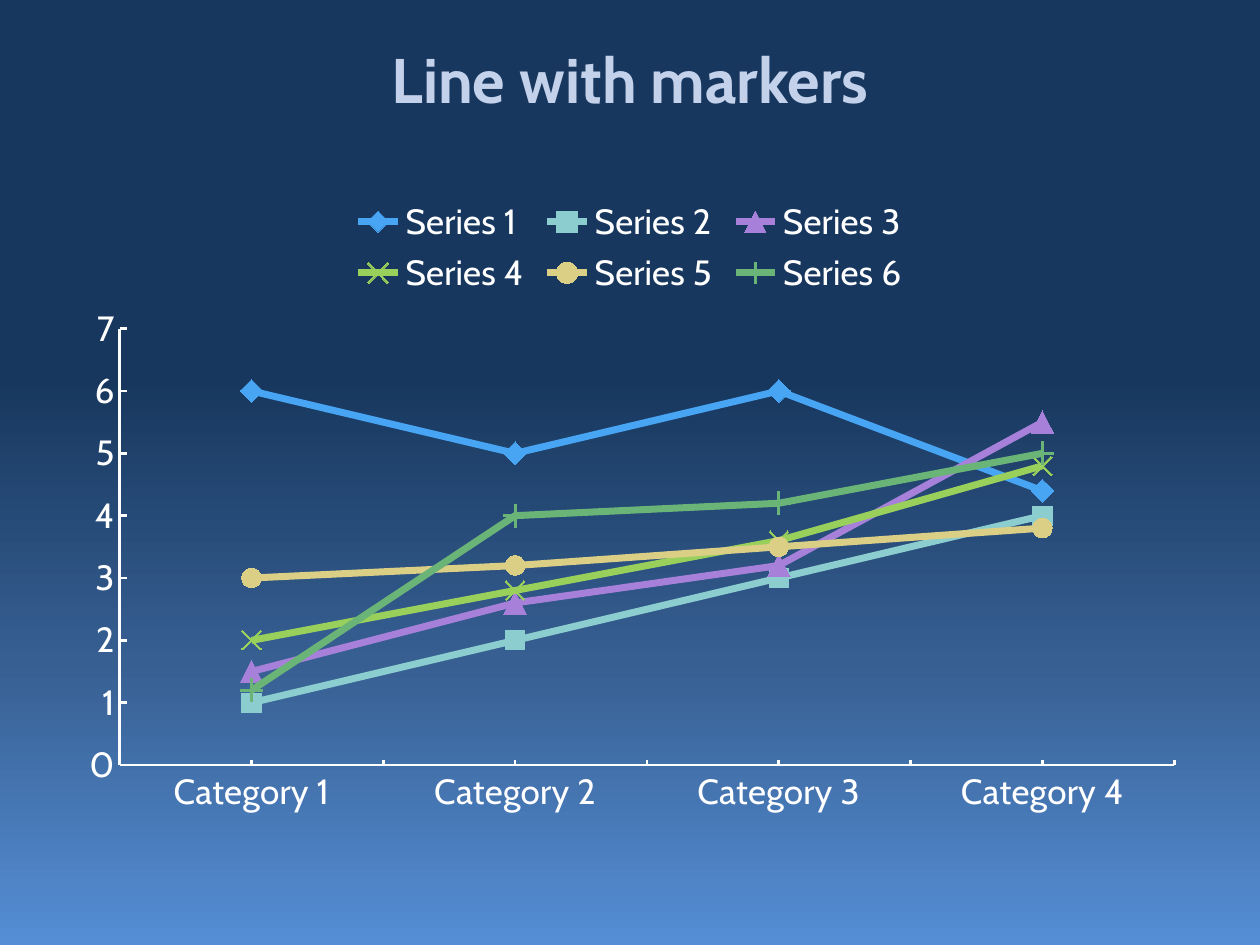
from copy import deepcopy

from lxml import etree
from pptx import Presentation
from pptx.chart.data import CategoryChartData
from pptx.dml.color import RGBColor
from pptx.enum.chart import (XL_CHART_TYPE, XL_LEGEND_POSITION,
                             XL_MARKER_STYLE, XL_TICK_MARK)
from pptx.enum.text import MSO_ANCHOR, PP_ALIGN
from pptx.oxml.ns import qn
from pptx.util import Inches, Pt

LINE_MARKERS = XL_CHART_TYPE.LINE_MARKERS
LEGEND_TOP = XL_LEGEND_POSITION.TOP
TICK_NONE, TICK_IN = XL_TICK_MARK.NONE, XL_TICK_MARK.INSIDE
DIAMOND, SQUARE, TRIANGLE = (XL_MARKER_STYLE.DIAMOND, XL_MARKER_STYLE.SQUARE,
                             XL_MARKER_STYLE.TRIANGLE)
CROSS, CIRCLE, PLUS = (XL_MARKER_STYLE.X, XL_MARKER_STYLE.CIRCLE,
                       XL_MARKER_STYLE.PLUS)
MIDDLE, CENTER = MSO_ANCHOR.MIDDLE, PP_ALIGN.CENTER

BACKGROUND = [(0, "17375E"), (0.4, "17375E"), (0.7, "375F92"), (1, "558ED5")]
CATEGORIES = [f"Category {n}" for n in range(1, 5)]
# values, colour, marker style, marker size
SERIES = [
    ((6, 5, 6, 4.4), "47A5F3", DIAMOND, 13),
    ((1, 2, 3, 4), "8CCDCF", SQUARE, 11),
    ((1.5, 2.6, 3.2, 5.5), "A780DA", TRIANGLE, 13),
    ((2, 2.8, 3.6, 4.8), "99D05C", CROSS, 11),
    ((3, 3.2, 3.5, 3.8), "DBCF85", CIRCLE, 11),
    ((1.2, 4, 4.2, 5), "6AB477", PLUS, 13),
]


def rgb(value):
    return RGBColor.from_string(value)


def set_layout(parent, index, inner=False, **fractions):
    """Place a chart part by fractions x, y, w, h of the chart."""
    for old in parent.findall(qn("c:layout")):
        parent.remove(old)
    layout = etree.Element(qn("c:layout"))
    manual = etree.SubElement(layout, qn("c:manualLayout"))
    settings = [("layoutTarget", "inner")] if inner else []
    settings += [("xMode", "edge"), ("yMode", "edge"), *fractions.items()]
    for tag, value in settings:
        etree.SubElement(manual, qn("c:" + tag)).set("val", str(value))
    parent.insert(index, layout)


class Deck:
    font, text, title_color = "Cabin", "FFFFFF", "C4D1EB"

    def __init__(self, prs):
        self.slide = prs.slides.add_slide(prs.slide_layouts[6])

    def style(self, font, size, color, bold=False):
        font.name, font.size, font.bold = self.font, Pt(size), bold
        font.color.rgb = rgb(color)

    def background(self, stops):
        fill = self.slide.background.fill
        fill.gradient()
        fill.gradient_angle = 270
        first = fill.gradient_stops[0]
        gs_list = self.slide.background.fill._fill._gradFill.gsLst
        for _ in range(len(stops) - len(gs_list)):
            gs_list.append(deepcopy(gs_list[0]))
        for stop, (position, color) in zip(fill.gradient_stops, stops):
            stop.position = position
            stop.color.rgb = rgb(color)

    def title(self, text, x, y, w, h):
        box = self.slide.shapes.add_textbox(Inches(x), Inches(y), Inches(w), Inches(h))
        tf = box.text_frame
        tf.word_wrap, tf.vertical_anchor = True, MIDDLE
        p = tf.paragraphs[0]
        p.alignment = CENTER
        r = p.add_run()
        r.text = text
        self.style(r.font, 36, self.title_color, bold=True)

    def axis(self, axis, major, minor):
        axis.has_major_gridlines = False
        axis.major_tick_mark, axis.minor_tick_mark = major, minor
        axis.format.line.color.rgb = rgb(self.text)
        axis.format.line.width = Pt(1.5)
        self.style(axis.tick_labels.font, 20, self.text)

    def line_chart(self, categories, series, x, y, w, h):
        data = CategoryChartData()
        data.categories = categories
        for n, (values, *_) in enumerate(series, 1):
            data.add_series(f"Series {n}", values)
        chart = self.slide.shapes.add_chart(
            LINE_MARKERS, Inches(x), Inches(y), Inches(w), Inches(h), data).chart
        chart.has_title = False
        self.style(chart.font, 18, self.text)
        chart.font.name = "Calibri"

        # Axes
        self.axis(chart.category_axis, TICK_NONE, TICK_IN)
        self.axis(chart.value_axis, TICK_IN, TICK_NONE)
        chart.value_axis.minimum_scale, chart.value_axis.maximum_scale = 0, 7
        chart.value_axis.major_unit = 1

        # Lines and markers
        plot = chart.plots[0]
        plot.vary_by_categories = False
        for s, (_, color, marker, size) in zip(plot.series, series):
            s.smooth = False
            s.format.line.color.rgb = rgb(color)
            s.format.line.width = Pt(4)
            s.marker.style, s.marker.size = marker, size
            s.marker.format.fill.solid()
            s.marker.format.fill.fore_color.rgb = rgb(color)
            s.marker.format.line.color.rgb = rgb(color)

        # Legend in two rows above the plot
        chart.has_legend = True
        legend = chart.legend
        legend.position, legend.include_in_layout = LEGEND_TOP, False
        self.style(legend.font, 20, self.text)
        set_layout(legend._element, 1, x=0.25, y=0.02, w=0.5, h=0.17)
        plot_area = chart._chartSpace.chart.plotArea
        set_layout(plot_area, 0, inner=True, x=0.05, y=0.23, w=0.93, h=0.67)


def main():
    prs = Presentation()
    prs.slide_width, prs.slide_height = Inches(10), Inches(7.5)
    deck = Deck(prs)
    deck.background(BACKGROUND)
    deck.title("Line with markers", 0.5, 0, 9, 1.25)
    deck.line_chart(CATEGORIES, SERIES, 0.5, 1.42, 9, 5.17)
    prs.save("out.pptx")


if __name__ == "__main__":
    main()
